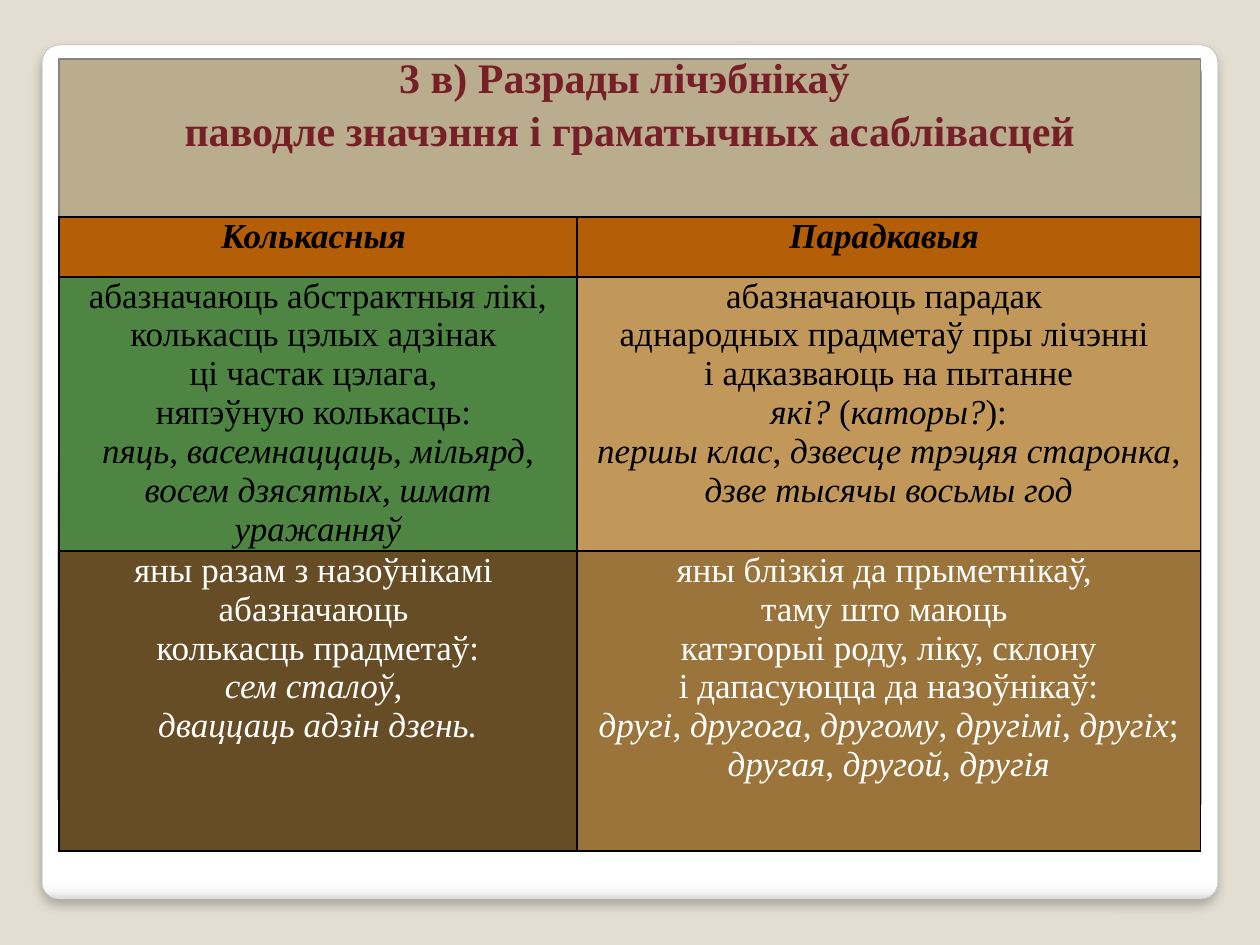
from dataclasses import dataclass

from pptx import Presentation
from pptx.dml.color import RGBColor
from pptx.enum.shapes import MSO_SHAPE
from pptx.enum.text import MSO_ANCHOR, MSO_AUTO_SIZE, PP_ALIGN
from pptx.oxml import parse_xml
from pptx.oxml.ns import nsdecls
from pptx.util import Cm, Pt


@dataclass(frozen=True)
class Theme:
    font: str = "Times New Roman"
    title_size: int = 24
    body_size: int = 20
    page: str = "E3DED1"
    panel_line: str = "A4A4A4"
    title_fill: str = "BAAD8D"
    title_line: str = "848484"
    title_text: str = "771F28"
    border: str = "000000"
    dark: str = "000000"
    light: str = "FFFFFF"
    card: tuple = ((0, "FFFFFF"), (98, "FFFFFF"), (99, "F7F7F7"), (100, "DADADA"))
    glow: tuple = ((0, "FFFFFF"), (55, "E1E1E1"), (100, "A2A2A2"))
    fills: tuple = (("B45F07", "B45F07"), ("4E8542", "C19859"), ("674D26", "9A743A"))


LINEAR = '<a:lin ang="5400000" scaled="0"/>'
RADIAL = ('<a:path path="circle"><a:fillToRect l="50000" t="175000" '
          'r="50000" b="-75000"/></a:path>')

TITLE = ["3 в) Разрады лічэбнікаў ", "паводле значэння і граматычных асаблівасцей"]

ROWS = [
    [["*Колькасныя *"], ["*Парадкавыя *"]],
    [["абазначаюць абстрактныя лікі, колькасць цэлых адзінак ",
      "ці частак цэлага, ",
      "няпэўную колькасць: ",
      "*пяць*,* васемнаццаць*,* мільярд*,* восем дзясятых*, *шмат уражанняў*"],
     ["абазначаюць парадак ",
      "аднародных прадметаў пры лічэнні ",
      "і адказваюць на пытанне",
      " *які?* (*каторы?*): ",
      "*першы клас*,* дзвесце трэцяя старонка*,* дзве тысячы восьмы год*"]],
    [["яны разам з назоўнікамі ",
      "абазначаюць ",
      "колькасць прадметаў:",
      "*сем сталоў*, ",
      "*дваццаць адзін дзень.*"],
     ["яны блізкія да прыметнікаў, ",
      "таму што маюць ",
      "катэгорыі роду, ліку, склону",
      " і дапасуюцца да назоўнікаў: ",
      "*другі*, *другога*,* другому*,* другімі*,* другіх*;* другая*,* другой*,* другія*"]],
]


class Deck:
    """Holds the theme and the current slide and adds styled elements to it."""

    def __init__(self, prs, theme):
        self.theme = theme
        self.s = prs.slides.add_slide(prs.slide_layouts[5])
        self.s.background.fill.solid()
        self.s.background.fill.fore_color.rgb = RGBColor.from_string(theme.page)

    def text(self, tf, lines, size, color, bold=False, spacing=1.0):
        """Set centred paragraphs, with italics between asterisks."""
        for i, line in enumerate(lines):
            p = tf.paragraphs[0] if i == 0 else tf.add_paragraph()
            p.alignment = PP_ALIGN.CENTER
            p.line_spacing = spacing
            p.space_before = Pt(0)
            for k, part in enumerate(line.split("*")):
                if part:
                    r = p.add_run()
                    r.text = part
                    r.font.name = self.theme.font
                    r.font.size = Pt(size)
                    r.font.bold = bold
                    r.font.italic = k % 2 == 1
                    r.font.color.rgb = RGBColor.from_string(color)

    def panel(self, box, stops, direction, line=None, shadow=False):
        """Add a rounded panel with a gradient fill."""
        sp = self.s.shapes.add_shape(MSO_SHAPE.ROUNDED_RECTANGLE, *map(Cm, box))
        sp.adjustments[0] = 0.02
        sp.shadow.inherit = False
        marks = "".join(f'<a:gs pos="{pos * 1000}"><a:srgbClr val="{color}"/></a:gs>'
                        for pos, color in stops)
        sp.fill.background()
        spPr = sp.element.spPr
        spPr.replace(spPr.find("{*}noFill"), parse_xml(
            f'<a:gradFill {nsdecls("a")} rotWithShape="1"><a:gsLst>{marks}</a:gsLst>'
            f'{direction}</a:gradFill>'))
        if line:
            sp.line.color.rgb = RGBColor.from_string(line)
            sp.line.width = Pt(0.16)
        else:
            sp.line.fill.background()
        if shadow:
            spPr.find("{*}effectLst").append(parse_xml(
                f'<a:outerShdw {nsdecls("a")} blurRad="{Pt(6)}" dist="{Pt(4)}" '
                'dir="5400000" algn="tl" rotWithShape="0"><a:srgbClr val="000000">'
                '<a:alpha val="25000"/></a:srgbClr></a:outerShdw>'))

    def title(self, box, lines):
        """Fill the title placeholder."""
        sp, t = self.s.shapes.title, self.theme
        sp.left, sp.top, sp.width, sp.height = map(Cm, box)
        sp.fill.solid()
        sp.fill.fore_color.rgb = RGBColor.from_string(t.title_fill)
        sp.line.color.rgb = RGBColor.from_string(t.title_line)
        sp.line.width = Pt(0.75)
        tf = sp.text_frame
        tf.auto_size = MSO_AUTO_SIZE.NONE
        tf.word_wrap = True
        tf.vertical_anchor = MSO_ANCHOR.BOTTOM
        tf.margin_top, tf.margin_bottom = Cm(0), Cm(1.25)
        self.text(tf, lines, t.title_size, t.title_text, bold=True, spacing=1.05)
        sp.element.getparent().append(sp.element)

    def cell(self, cell, lines, fill, color, bold):
        """Fill one table cell and draw its borders."""
        cell.margin_left = cell.margin_right = Cm(0.05)
        cell.margin_top = cell.margin_bottom = Cm(0)
        cell.fill.solid()
        cell.fill.fore_color.rgb = RGBColor.from_string(fill)
        tcPr = cell._tc.get_or_add_tcPr()
        for i, side in enumerate("LRTB"):
            tcPr.insert(i, parse_xml(
                f'<a:ln{side} {nsdecls("a")} w="{Pt(1)}"><a:solidFill>'
                f'<a:srgbClr val="{self.theme.border}"/></a:solidFill></a:ln{side}>'))
        self.text(cell.text_frame, lines, self.theme.body_size, color, bold)

    def table(self, left, top, widths, heights, rows):
        """Add the comparison table."""
        t = self.theme
        tbl = self.s.shapes.add_table(len(heights), len(widths), Cm(left), Cm(top),
                                      Cm(sum(widths)), Cm(sum(heights))).table
        tbl.first_row = tbl.horz_banding = False
        for col, width in zip(tbl.columns, widths):
            col.width = Cm(width)
        for i, (row, height) in enumerate(zip(tbl.rows, heights)):
            row.height = Cm(height)
            for j, lines in enumerate(rows[i]):
                self.cell(tbl.cell(i, j), lines, t.fills[i][j],
                          t.light if i == 2 else t.dark, bold=i == 0)


def main():
    prs = Presentation()
    prs.slide_width, prs.slide_height = Cm(25.4), Cm(19.05)
    theme = Theme()
    deck = Deck(prs, theme)
    deck.panel((0.85, 0.91, 23.7, 17.22), theme.card, LINEAR, theme.panel_line, shadow=True)
    deck.panel((1.17, 1.19, 23.06, 15.24), theme.glow, RADIAL)
    deck.title((1.19, 1.19, 23.01, 3.18), TITLE)
    deck.table(1.19, 4.37, (10.44, 12.57), (1.21, 5.53, 6.05), ROWS)
    prs.save("out.pptx")


if __name__ == "__main__":
    main()
